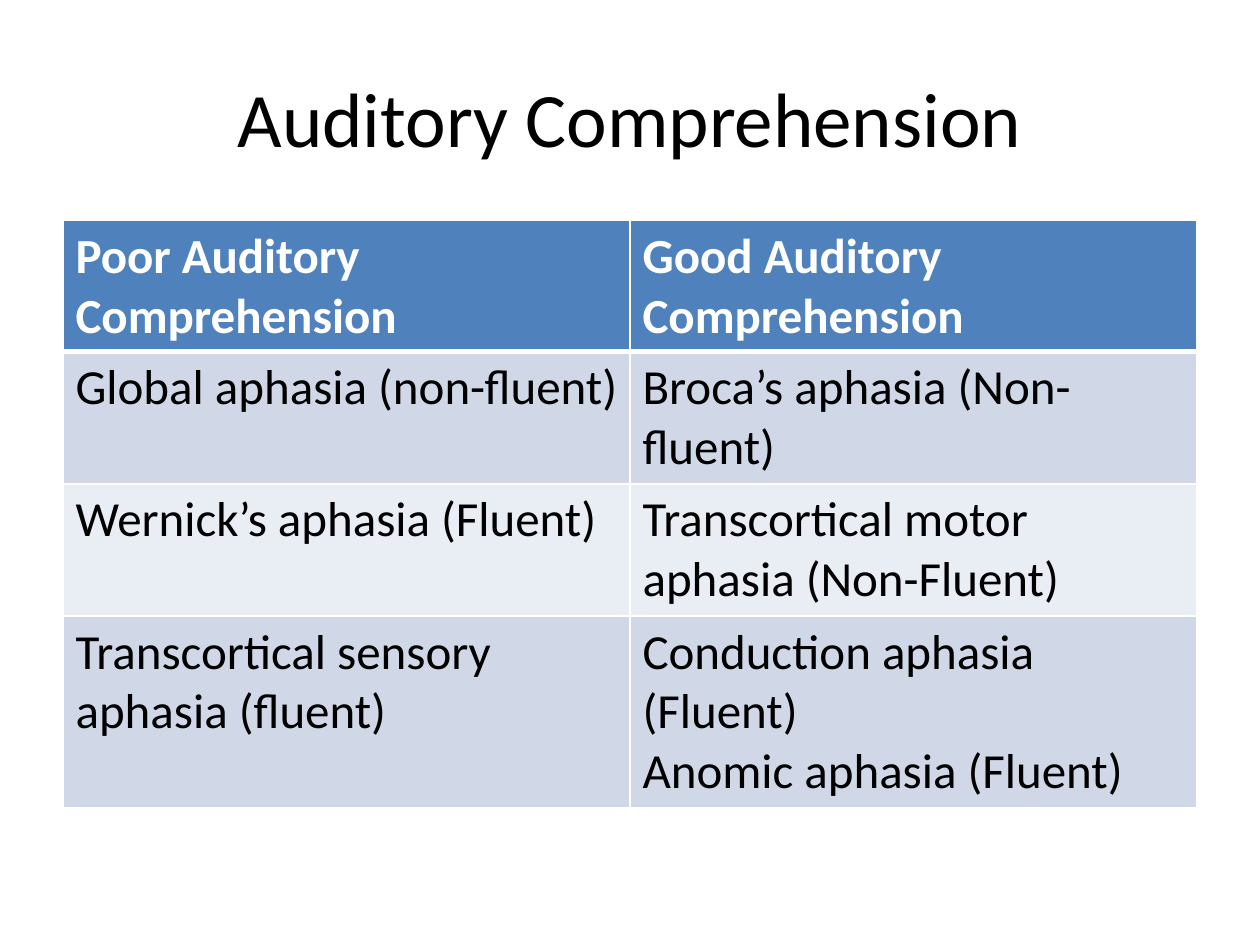
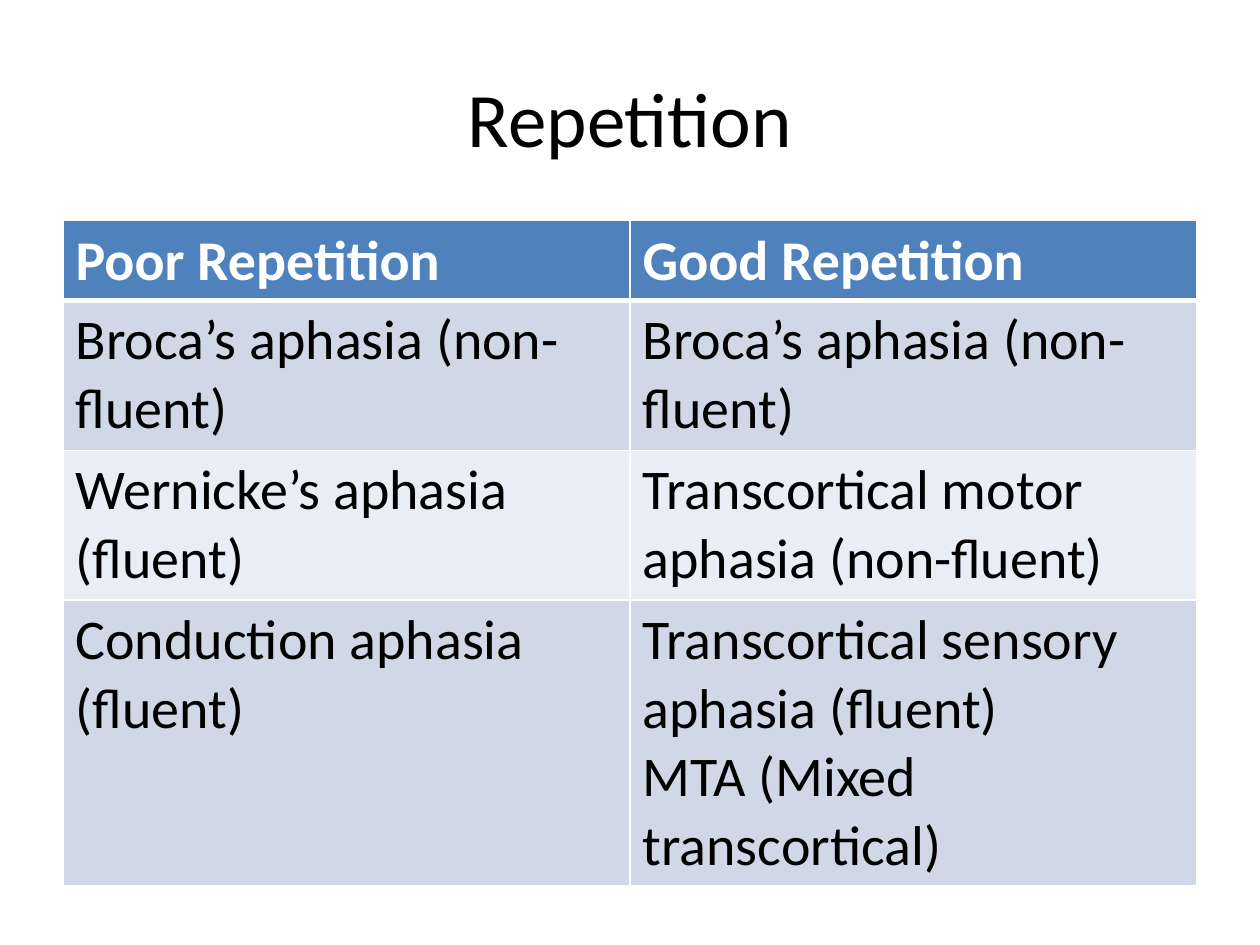
from dataclasses import dataclass

from lxml import etree
from pptx import Presentation
from pptx.dml.color import RGBColor
from pptx.enum.text import MSO_ANCHOR, PP_ALIGN
from pptx.oxml.ns import qn
from pptx.util import Inches, Pt


@dataclass(frozen=True)
class Theme:
    font: str = "Calibri"
    title_size: int = 44
    black: str = "000000"
    white: str = "FFFFFF"
    header: str = "4F81BD"
    bands: tuple[str, str] = ("D0D8E8", "E9EDF4")
    border: int = 1
    header_border: int = 3


@dataclass(frozen=True)
class ComparisonSlide:
    title: str
    size: int
    heights: tuple[float, ...]
    rows: tuple[tuple[str, str], ...]


THEME = Theme()
LEFT, WIDTH = Inches(0.5), Inches(9)

SLIDES = (
    ComparisonSlide(
        "Auditory Comprehension", 28, (1.04, 1.05, 1.05, 1.52),
        (
            ("Poor Auditory Comprehension", "Good Auditory Comprehension"),
            ("Global aphasia (non-fluent)", "Broca’s aphasia (Non-fluent)"),
            ("Wernick’s aphasia (Fluent)", "Transcortical motor aphasia (Non-Fluent)"),
            ("Transcortical sensory aphasia (fluent)",
             "Conduction aphasia (Fluent)\nAnomic aphasia (Fluent)"),
        ),
    ),
    ComparisonSlide(
        "Repetition", 32, (0.63, 1.19, 1.19, 2.27),
        (
            ("Poor Repetition", "Good Repetition"),
            ("Broca’s aphasia (non-fluent)", "Broca’s aphasia (non-fluent)"),
            ("Wernicke’s aphasia (fluent)", "Transcortical motor aphasia (non-fluent)"),
            ("Conduction aphasia (fluent)",
             "Transcortical sensory aphasia (fluent)\nMTA (Mixed transcortical)"),
        ),
    ),
)


def format_text(tf, size: int, color: str, bold: bool = False) -> None:
    for p in tf.paragraphs:
        for r in p.runs:
            r.font.name = THEME.font
            r.font.size = Pt(size)
            r.font.bold = bold
            r.font.color.rgb = RGBColor.from_string(color)


def add_title(s, title: str) -> None:
    tf = s.shapes.add_textbox(LEFT, Inches(0.3), WIDTH, Inches(1.25)).text_frame
    tf.word_wrap = True
    tf.vertical_anchor = MSO_ANCHOR.MIDDLE
    tf.text = title
    tf.paragraphs[0].alignment = PP_ALIGN.CENTER
    format_text(tf, THEME.title_size, THEME.black)


def add_borders(cell, row: int) -> None:
    heavy_edge = {0: "B", 1: "T"}.get(row)
    props = cell._tc.get_or_add_tcPr()
    for edge in "LRTB":
        width = THEME.header_border if edge == heavy_edge else THEME.border
        ln = etree.SubElement(props, qn(f"a:ln{edge}"), w=str(Pt(width)))
        fill = etree.SubElement(ln, qn("a:solidFill"))
        etree.SubElement(fill, qn("a:srgbClr"), val=THEME.white)


def add_comparison(s, content: ComparisonSlide) -> None:
    columns = len(content.rows[0])
    table = s.shapes.add_table(
        len(content.rows), columns, LEFT, Inches(1.75), WIDTH, Inches(sum(content.heights))
    ).table
    table.horz_banding = False
    for i, (height, row) in enumerate(zip(content.heights, content.rows)):
        table.rows[i].height = Inches(height)
        is_header = i == 0
        for j, value in enumerate(row):
            cell = table.cell(i, j)
            cell.text_frame.text = value
            format_text(cell.text_frame, content.size,
                        THEME.white if is_header else THEME.black, is_header)
            add_borders(cell, i)
            cell.fill.solid()
            color = THEME.header if is_header else THEME.bands[(i - 1) % 2]
            cell.fill.fore_color.rgb = RGBColor.from_string(color)


def main() -> None:
    prs = Presentation()
    prs.slide_width, prs.slide_height = Inches(10), Inches(7.5)
    for content in SLIDES:
        s = prs.slides.add_slide(prs.slide_layouts[6])
        add_title(s, content.title)
        add_comparison(s, content)
    prs.save("out.pptx")


if __name__ == "__main__":
    main()
